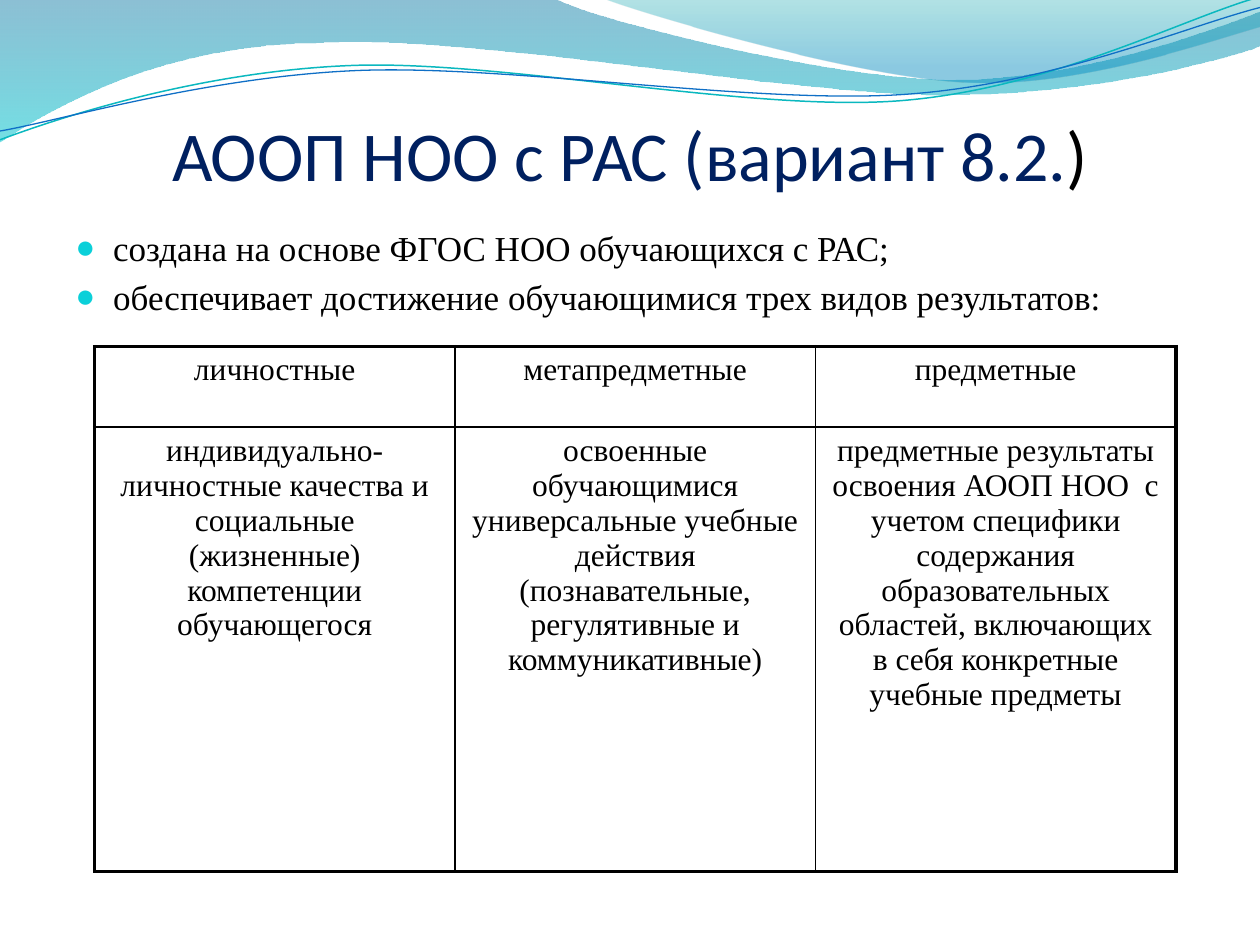
from pptx import Presentation
from pptx.util import Inches, Pt
from pptx.dml.color import RGBColor as RGB
from pptx.enum.text import PP_ALIGN as Align, MSO_ANCHOR as Anchor
from pptx.oxml import parse_xml as to_xml
from pptx.oxml.ns import nsdecls

HUES = {
    "navy": "002060", "black": "000000", "white": "FFFFFF", "dot": "0BD0D9",
    "teal": "0AB8BF", "blue": "0F6FC6", "sea": "0074A1", "aqua": "00C6CF",
    "mint": "00A1A9", "sky": "008BBF",
}
SERIF = "Times New Roman"
CELL = Inches(0.1)
COLS, ROWS = 100, 75
TILT = 357.3

BANDS = [
    ([[(0, -0.1)], [(44, -0.1)],
      [(47.6, 1.7), (66.4, 6.3), (75.8, 6.3)],
      [(85.3, 6.3), (95.8, 2.6), (100, 0.9)], [(100.1, 3.6)],
      [(98.3, 4.4), (87, 7.6), (74.6, 7.5)],
      [(62.2, 7.5), (38.2, 2.8), (25.7, 3.4)],
      [(12.9, 3.5), (4.6, 8.3), (-0.1, 11.3)], [(0, -0.1)]],
     [(0, "sea", 45), (100, "aqua", 55)]),
    ([[(47.9, -0.1)],
      [(50.9, 1.1), (68.2, 6.2), (76.9, 6.5)],
      [(85.6, 6.9), (96.1, 3.2), (100, 2.1)], [(100, 0)], [(47.9, -0.1)]],
     [(0, "mint", 30), (80, "sky", 45)]),
]
LINES = [
    ([[(-0.2, 8.74)], [(4.68, 7.17), (15.84, 4.09), (27.75, 4.16)],
      [(39.56, 4.21), (59.14, 9.34), (71.17, 9.01)],
      [(83.2, 8.67), (93.95, 3.57), (100.03, 2.16)]], "teal", 0.85),
    ([[(-0.16, 8.04)], [(4.58, 7.46), (16.43, 4.52), (28.34, 4.58)],
      [(40.35, 4.65), (59.58, 8.76), (71.6, 8.52)],
      [(83.53, 8.28), (94.23, 4.18), (100.19, 2.96)]], "blue", 0.75),
]
ITEMS = [
    "создана на основе ФГОС НОО обучающихся с РАС;",
    "обеспечивает достижение обучающимися трех видов результатов:",
]
GRID = [
    ["личностные", "метапредметные", "предметные"],
    ["индивидуально-личностные качества и социальные (жизненные) "
     "компетенции обучающегося",
     "освоенные обучающимися универсальные учебные действия "
     "(познавательные, регулятивные и коммуникативные)",
     "предметные результаты освоения АООП НОО  с учетом специфики "
     "содержания образовательных областей, включающих в себя конкретные "
     "учебные предметы"],
]


def span(n):
    return int(n * CELL)


def style(run, size, face, hue="black"):
    run.font.size = Pt(size)
    run.font.name = face
    run.font.color.rgb = RGB.from_string(HUES[hue])


def draw(slide, box, route, close):
    parts = [[(span(box[0] + x), span(box[1] + y)) for x, y in part]
             for part in route]
    knots = [part[-1] for part in parts]
    pen = slide.shapes.build_freeform(*knots[0], scale=1.0)
    pen.add_line_segments(knots[1:], close=close)
    shape = pen.convert_to_shape()
    shape.shadow.inherit = False
    steps = list(shape._element.iter("{*}lnTo"))
    for step, part in zip(steps, parts[1:]):
        if len(part) == 3:
            dots = "".join(f'<a:pt x="{x - shape.left}" y="{y - shape.top}"/>'
                           for x, y in part)
            step.getparent().replace(step, to_xml(
                f'<a:cubicBezTo {nsdecls("a")}>{dots}</a:cubicBezTo>'))
    return shape


def blend(shape, stops):
    marks = "".join(
        f'<a:gs pos="{pos * 1000}"><a:srgbClr val="{HUES[hue]}">'
        f'<a:alpha val="{alpha * 1000}"/></a:srgbClr></a:gs>'
        for pos, hue, alpha in stops)
    shape.fill.background()
    old = shape._element.spPr.find("{*}noFill")
    old.getparent().replace(old, to_xml(
        f'<a:gradFill {nsdecls("a")} rotWithShape="1"><a:gsLst>{marks}</a:gsLst>'
        '<a:lin ang="5400000" scaled="0"/></a:gradFill>'))


def waves(slide, box):
    for route, stops in BANDS:
        shape = draw(slide, box, route, True)
        shape.line.fill.background()
        blend(shape, stops)
    for route, hue, width in LINES:
        shape = draw(slide, box, route, False)
        shape.rotation = TILT
        shape.fill.background()
        shape.line.color.rgb = RGB.from_string(HUES[hue])
        shape.line.width = Pt(width)


def add_text(slide, box):
    frame = slide.shapes.add_textbox(*map(span, box)).text_frame
    frame.word_wrap = True
    return frame


def title(slide, box):
    frame = add_text(slide, box)
    frame.vertical_anchor = Anchor.BOTTOM
    frame.margin_left = frame.margin_right = frame.margin_bottom = 0
    para = frame.paragraphs[0]
    para.alignment = Align.CENTER
    for text, hue in [("АООП НОО с РАС (вариант 8.2.", "navy"), (")", "black")]:
        run = para.add_run()
        run.text = text
        style(run, 40, "Calibri", hue)


def bullets(slide, box):
    frame = add_text(slide, box)
    frame.text = "\n".join(ITEMS)
    for i, para in enumerate(frame.paragraphs):
        props = para._p.get_or_add_pPr()
        props.set("marL", str(span(3)))
        props.set("indent", str(span(-3)))
        if i:
            para.space_before = Pt(4)
        for tag in (f'buClr {nsdecls("a")}><a:srgbClr val="{HUES["dot"]}"/></a:buClr',
                    f'buSzPct {nsdecls("a")} val="95000"/',
                    f'buFont {nsdecls("a")} typeface="{SERIF}"/',
                    f'buChar {nsdecls("a")} char="●"/'):
            props.append(to_xml(f"<a:{tag}>"))
        style(para.runs[0], 20, SERIF)


def edge(cell, side, width):
    cell._tc.get_or_add_tcPr().append(to_xml(
        f'<a:ln{side} {nsdecls("a")} w="{Pt(width)}"><a:solidFill>'
        f'<a:srgbClr val="{HUES["black"]}"/></a:solidFill></a:ln{side}>'))


def results(slide, box):
    high, wide = len(GRID), len(GRID[0])
    table = slide.shapes.add_table(high, wide, *map(span, box)).table
    table.first_row = table.horz_banding = False
    table.rows[0].height = span(6.4)
    table.rows[1].height = span(box[3] - 6.4)
    for r, row in enumerate(GRID):
        for c, text in enumerate(row):
            cell = table.cell(r, c)
            outer = {"L": c == 0, "R": c == wide - 1, "T": r == 0, "B": r == high - 1}
            for side, thick in outer.items():
                edge(cell, side, 2.25 if thick else 1)
            cell.fill.background()
            cell.text_frame.text = text
            para = cell.text_frame.paragraphs[0]
            para.alignment = Align.CENTER
            style(para.runs[0], 18, SERIF)


def main():
    deck = Presentation()
    deck.slide_width, deck.slide_height = span(COLS), span(ROWS)
    slide = deck.slides.add_slide(deck.slide_layouts[6])
    slide.background.fill.solid()
    slide.background.fill.fore_color.rgb = RGB.from_string(HUES["white"])
    waves(slide, (0, 0, COLS, 12))
    title(slide, (5, 3, 90, 12.5))
    bullets(slide, (5, 17.5, 86.7, 10))
    results(slide, (7.5, 27.5, 85.84, 41.66))
    deck.save("out.pptx")


if __name__ == "__main__":
    main()
